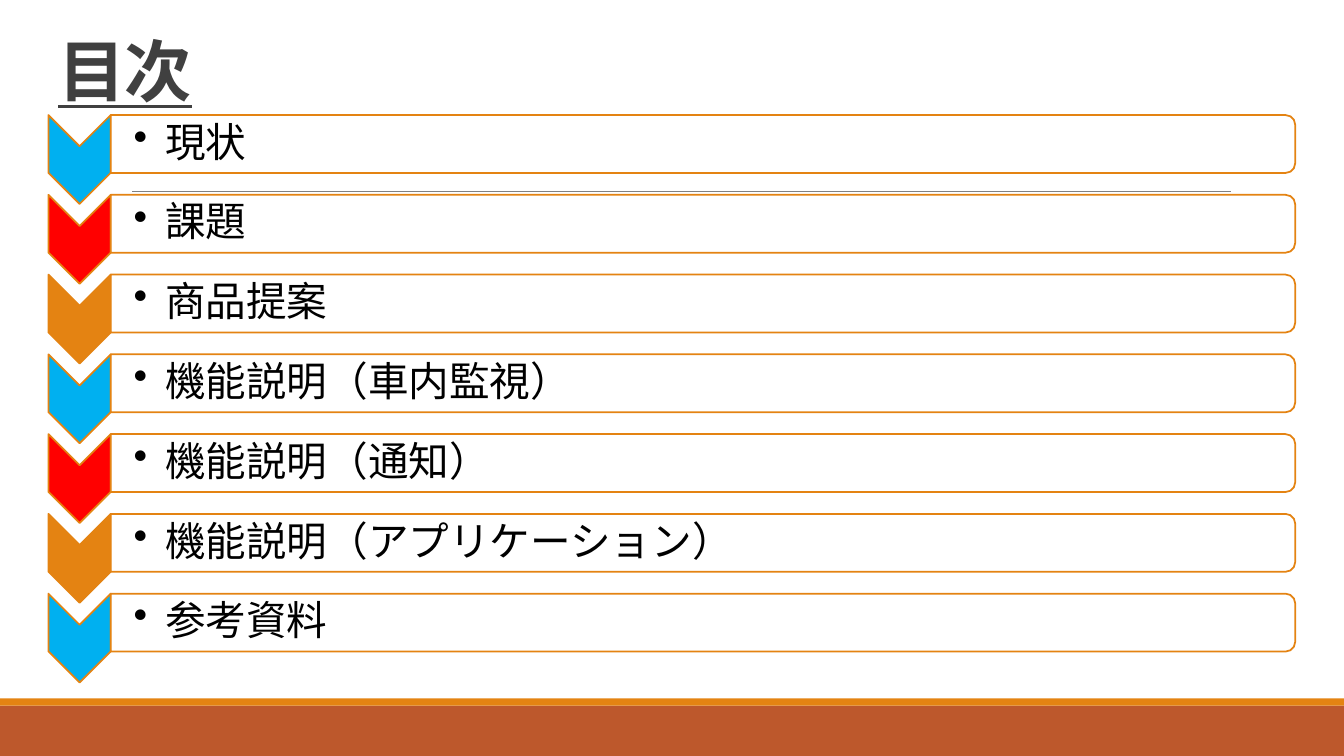
from dataclasses import dataclass

from lxml.etree import SubElement
from pptx import Presentation
from pptx.dml.color import RGBColor
from pptx.enum.shapes import MSO_CONNECTOR, MSO_SHAPE
from pptx.enum.text import MSO_ANCHOR, MSO_AUTO_SIZE, PP_ALIGN
from pptx.oxml.ns import qn
from pptx.util import Cm, Pt


@dataclass(frozen=True)
class Theme:
    orange: str = "E48312"
    rust: str = "BD582C"
    blue: str = "00B0F0"
    red: str = "FF0000"
    white: str = "FFFFFF"
    gray: str = "808080"
    title_color: str = "404040"
    text_color: str = "000000"
    title_size: int = 48
    item_size: int = 29
    outline_width: float = 1.25
    rule_width: float = 0.5
    latin_font: str = "Calibri"
    japanese_font: str = "Noto Sans CJK JP"


THEME = Theme()
ITEMS = [
    "現状",
    "課題",
    "商品提案",
    "機能説明（車内監視）",
    "機能説明（通知）",
    "機能説明（アプリケーション）",
    "参考資料",
]
CHEVRON_COLORS = [THEME.blue, THEME.red, THEME.orange]
SLIDE_WIDTH = 33.87
FIRST_ROW_TOP = 2.9
ROW_PITCH = 2.01
CHEVRON_LEFT = 1.22
CHEVRON_WIDTH = 1.57
CHEVRON_HEIGHT = 2.24
BAR_LEFT = CHEVRON_LEFT + CHEVRON_WIDTH
BAR_WIDTH = 29.85
BAR_HEIGHT = 1.46


def add_filled_shape(slide, kind, left, top, width, height, fill, outline=None):
    shape = slide.shapes.add_shape(kind, Cm(left), Cm(top), Cm(width), Cm(height))
    shape.shadow.inherit = False
    shape.fill.solid()
    shape.fill.fore_color.rgb = RGBColor.from_string(fill)
    if outline:
        shape.line.color.rgb = RGBColor.from_string(outline)
        shape.line.width = Pt(THEME.outline_width)
    else:
        shape.line.fill.background()
    return shape


def add_turned_shape(slide, kind, left, top, width, height, fill):
    shift = (width - height) / 2
    shape = add_filled_shape(
        slide, kind, left + shift, top - shift, height, width, fill, THEME.orange
    )
    shape.rotation = 90
    return shape


def add_run(paragraph, text, size, color, font):
    run = paragraph.add_run()
    run.text = text
    run.font.size = Pt(size)
    run.font.color.rgb = RGBColor.from_string(color)
    run.font.name = font
    SubElement(run.font._element, qn("a:ea"), typeface=THEME.japanese_font)
    return run


def add_bullet(paragraph, indent):
    properties = paragraph._p.get_or_add_pPr()
    properties.set("marL", str(indent))
    properties.set("indent", str(-indent))
    SubElement(properties, qn("a:buChar"), char="•")


def add_rule(slide, left, right, y):
    rule = slide.shapes.add_connector(
        MSO_CONNECTOR.STRAIGHT, Cm(left), Cm(y), Cm(right), Cm(y)
    )
    rule.line.color.rgb = RGBColor.from_string(THEME.gray)
    rule.line.width = Pt(THEME.rule_width)
    SubElement(rule._element.spPr, qn("a:effectLst"))


def format_title(slide, text):
    title = slide.shapes.title
    title.left, title.top = Cm(1.22), Cm(-1.14)
    title.width, title.height = Cm(27.94), Cm(4.04)
    frame = title.text_frame
    frame.auto_size = MSO_AUTO_SIZE.NONE
    frame.vertical_anchor = MSO_ANCHOR.BOTTOM
    paragraph = frame.paragraphs[0]
    paragraph.alignment = PP_ALIGN.LEFT
    paragraph.line_spacing = 0.85
    run = add_run(
        paragraph, text, THEME.title_size, THEME.title_color, THEME.japanese_font
    )
    run.font.bold = True
    run.font.underline = True
    run.font._element.set("spc", "-50")


def add_item_text(slide, text, top):
    box = slide.shapes.add_textbox(Cm(BAR_LEFT), Cm(top), Cm(29.77), Cm(1.32))
    frame = box.text_frame
    frame.word_wrap = True
    frame.vertical_anchor = MSO_ANCHOR.MIDDLE
    frame.margin_left = Cm(0.58)
    frame.margin_top = frame.margin_right = frame.margin_bottom = Cm(0.05)
    paragraph = frame.paragraphs[0]
    paragraph.level = 1
    paragraph.alignment = PP_ALIGN.LEFT
    paragraph.line_spacing = 0.9
    paragraph.space_after = Pt(THEME.item_size * 0.15)
    add_bullet(paragraph, Cm(0.79))
    add_run(paragraph, text, THEME.item_size, THEME.text_color, THEME.latin_font)


def add_agenda_row(slide, text, top, color):
    add_turned_shape(
        slide, MSO_SHAPE.CHEVRON, CHEVRON_LEFT, top, CHEVRON_WIDTH, CHEVRON_HEIGHT, color
    )
    bar = add_turned_shape(
        slide, MSO_SHAPE.ROUND_2_SAME_RECTANGLE,
        BAR_LEFT, top, BAR_WIDTH, BAR_HEIGHT, THEME.white,
    )
    fill_color = bar._element.spPr.find(qn("a:solidFill"))[0]
    SubElement(fill_color, qn("a:alpha"), val="90000")
    add_item_text(slide, text, top + 0.07)


def main():
    presentation = Presentation()
    presentation.slide_width = Cm(SLIDE_WIDTH)
    presentation.slide_height = Cm(19.05)
    slide = presentation.slides.add_slide(presentation.slide_layouts[5])

    add_rule(slide, 3.33, 31.01, 4.83)
    add_filled_shape(
        slide, MSO_SHAPE.RECTANGLE, 0, 17.78, SLIDE_WIDTH, 1.27, THEME.rust
    )
    add_filled_shape(
        slide, MSO_SHAPE.RECTANGLE, 0, 17.6, SLIDE_WIDTH, 0.18, THEME.orange
    )
    format_title(slide, "目次")
    for index, text in enumerate(ITEMS):
        color = CHEVRON_COLORS[index % len(CHEVRON_COLORS)]
        add_agenda_row(slide, text, FIRST_ROW_TOP + index * ROW_PITCH, color)

    presentation.save("out.pptx")


if __name__ == "__main__":
    main()
